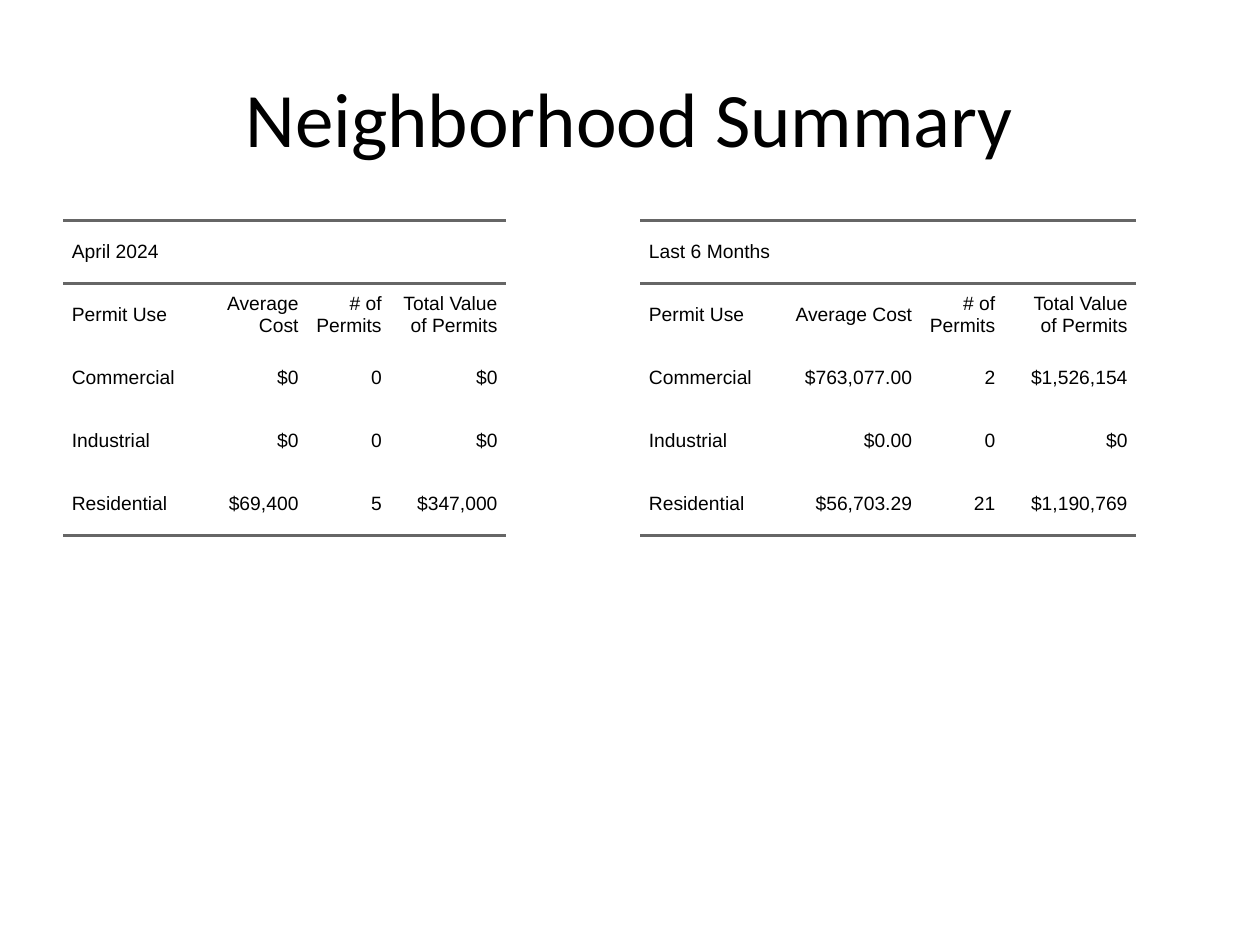
from pptx import Presentation
from pptx.dml.color import RGBColor
from pptx.enum.text import MSO_ANCHOR, PP_ALIGN
from pptx.oxml.ns import qn
from pptx.util import Inches, Pt
from lxml.etree import SubElement

COLORS = {"text": "000000", "rule": "666666"}
WIDTH, HEIGHT = 10, 7.5
MARGIN = 0.05 * WIDTH
TABLE_W, TABLE_H = 0.442 * WIDTH, 0.66 * HEIGHT
TABLE_TOP = 1.75
ROW_H = 0.5
PAD = 0.07

HEADER = ["Permit Use", "Average Cost", "# of Permits", "Total Value of Permits"]
APRIL = [
    ["Commercial", "$0", "0", "$0"],
    ["Industrial", "$0", "0", "$0"],
    ["Residential", "$69,400", "5", "$347,000"],
]
HALF_YEAR = [
    ["Commercial", "$763,077.00", "2", "$1,526,154"],
    ["Industrial", "$0.00", "0", "$0"],
    ["Residential", "$56,703.29", "21", "$1,190,769"],
]


def write(tf, text, size, font, align, space=0, indent=0):
    tf.word_wrap = True
    p = tf.paragraphs[0]
    p.alignment = align
    p.space_before = p.space_after = Pt(space)
    for side in ("marL", "marR"):
        p._p.get_or_add_pPr().set(side, str(Inches(indent)))
    r = p.add_run()
    r.text = text
    r.font.size = Pt(size)
    r.font.name = font
    r.font.color.rgb = RGBColor.from_string(COLORS["text"])


def set_borders(cell, ruled):
    tcPr = cell._tc.get_or_add_tcPr()
    for side in ("L", "R", "T", "B"):
        ln = SubElement(tcPr, qn(f"a:ln{side}"), w=str(Pt(1.5)))
        if side in ruled:
            fill = SubElement(ln, qn("a:solidFill"))
            SubElement(fill, qn("a:srgbClr"), val=COLORS["rule"])
        else:
            SubElement(ln, qn("a:noFill"))


def add_title(slide, text, left, top, width, height):
    sp = slide.shapes.add_textbox(*map(Inches, (left, top, width, height)))
    sp.text_frame.vertical_anchor = MSO_ANCHOR.MIDDLE
    write(sp.text_frame, text, 44, "Calibri", PP_ALIGN.CENTER)


def add_permit_table(slide, period, body, col_widths, left, top, width, height):
    rows = [[period, "", "", ""], HEADER, *body]
    box = map(Inches, (left, top, width, height))
    frame = slide.shapes.add_table(len(rows), len(HEADER), *box)
    table = frame.table
    table.first_row = table.horz_banding = False
    for column, col_width in zip(table.columns, col_widths):
        column.width = Inches(col_width)
    for row in table.rows:
        row.height = Inches(ROW_H)
    frame.width, frame.height = Inches(width), Inches(height)
    table.cell(0, 0).merge(table.cell(0, len(HEADER) - 1))

    for i, row in enumerate(rows):
        ruled = "TB" if i < 2 else "B" if i == len(rows) - 1 else ""
        for j, text in enumerate(row):
            cell = table.cell(i, j)
            cell.vertical_anchor = MSO_ANCHOR.MIDDLE
            cell.margin_left = cell.margin_right = 0
            cell.margin_top = cell.margin_bottom = Inches(PAD)
            set_borders(cell, ruled)
            cell.fill.background()
            if text:
                align = PP_ALIGN.RIGHT if j else PP_ALIGN.LEFT
                write(cell.text_frame, text, 11, "Arial", align, space=5, indent=PAD)


def main():
    prs = Presentation()
    prs.slide_width, prs.slide_height = Inches(WIDTH), Inches(HEIGHT)
    slide = prs.slides.add_slide(prs.slide_layouts[6])
    right_left = WIDTH - MARGIN - TABLE_W
    add_permit_table(slide, "April 2024", APRIL, [1.1, 0.84, 0.66, 0.92],
                     MARGIN, TABLE_TOP, TABLE_W, TABLE_H)
    add_permit_table(slide, "Last 6 Months", HALF_YEAR, [1.1, 1.13, 0.66, 1.05],
                     right_left, TABLE_TOP, TABLE_W, TABLE_H)
    add_title(slide, "Neighborhood Summary",
              MARGIN, 0.04 * HEIGHT, WIDTH - 2 * MARGIN, HEIGHT / 6)
    prs.save("out.pptx")


if __name__ == "__main__":
    main()
